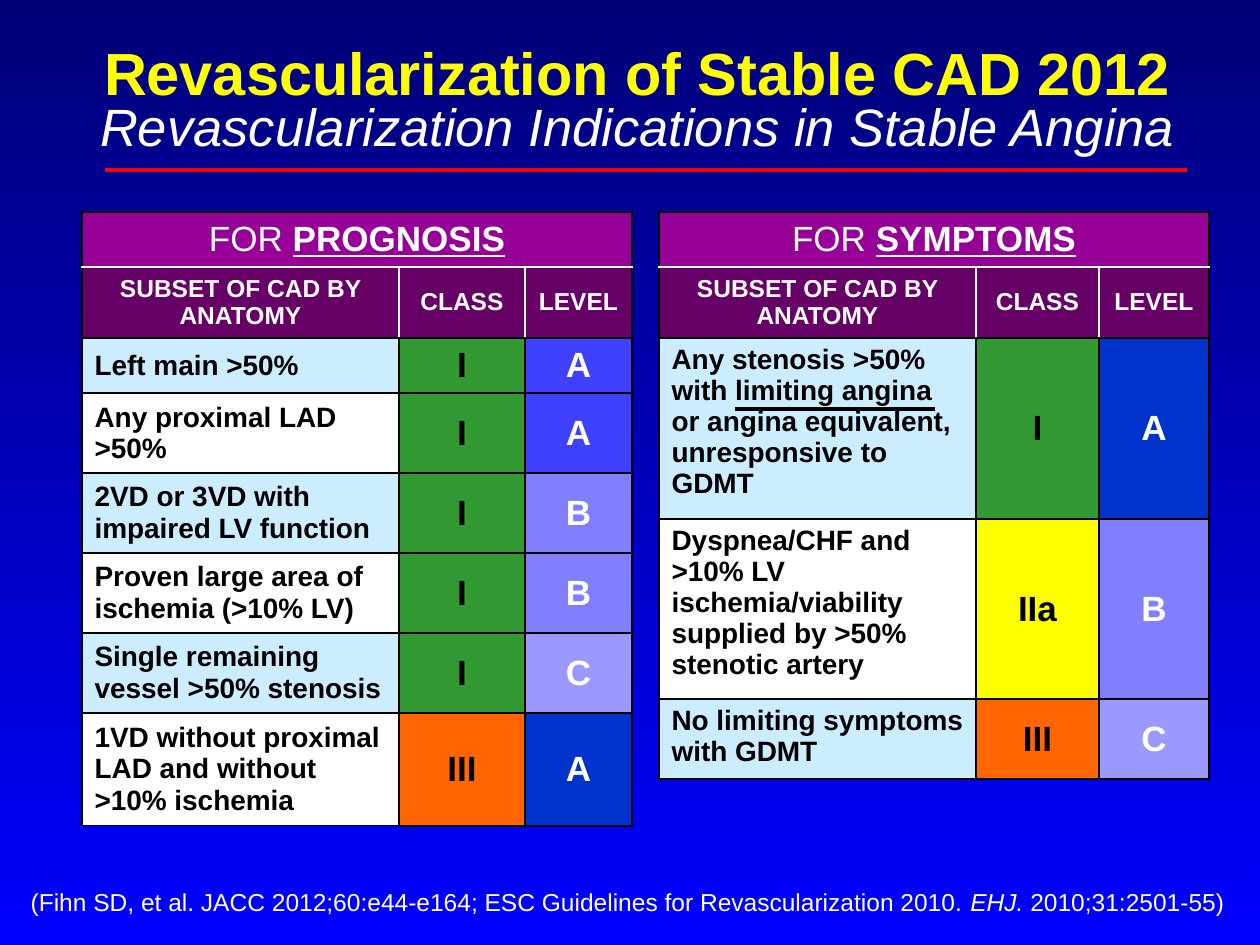
import pptx
import pptx.dml.color
import pptx.enum.shapes
import pptx.enum.text
import pptx.oxml
import pptx.oxml.ns
import pptx.util
from lxml import etree

PX = 914400 / 126
COLORS = {
    "night": "000076", "blue": "0000FF", "yellow": "FFFF00", "white": "FFFFFF",
    "black": "000000", "red": "FF0000", "purple": "960096", "plum": "660066",
    "ice": "CCECFF", "green": "339933", "orange": "FF6600",
    "violet": "4040FF", "royal": "0033CC", "lavender": "8080FF", "pale": "9999FF",
}
RGB = {name: pptx.dml.color.RGBColor.from_string(value) for name, value in COLORS.items()}
CENTER, LEFT = pptx.enum.text.PP_ALIGN.CENTER, pptx.enum.text.PP_ALIGN.LEFT
TOP, MIDDLE, BOTTOM = (pptx.enum.text.MSO_ANCHOR.TOP, pptx.enum.text.MSO_ANCHOR.MIDDLE,
                       pptx.enum.text.MSO_ANCHOR.BOTTOM)


def write(paragraph, align, size, color, *runs):
    """Add runs, each a text with a dict of font values that differ from plain."""
    paragraph.alignment = align
    for text, changes in runs:
        run = paragraph.add_run()
        run.text = text
        values = {"name": "Arial", "size": pptx.util.Pt(size), "bold": False, "italic": False}
        for key, value in (values | changes).items():
            setattr(run.font, key, value)
        run.font.color.rgb = RGB[color]


def paint(cell, fill, edges):
    """Fill a cell and draw its edges, each given as (colour, points)."""
    cell.fill.solid()
    cell.fill.fore_color.rgb = RGB[fill]
    properties = cell._tc.get_or_add_tcPr()
    for index, side in enumerate("LRTB"):
        color, points = edges[side]
        properties.insert(index, pptx.oxml.parse_xml(
            f'<a:ln{side} {pptx.oxml.ns.nsdecls("a")} w="{int(points * 12700)}">'
            f'<a:solidFill><a:srgbClr val="{COLORS[color]}"/></a:solidFill></a:ln{side}>'))


deck = pptx.Presentation()
deck.slide_width, deck.slide_height = int(1260 * PX), int(945 * PX)
slide = deck.slides.add_slide(deck.slide_layouts[5])

backdrop = slide.background.fill
backdrop.gradient()
backdrop.gradient_angle = 270
for stop, color, position in zip(backdrop.gradient_stops, ("night", "blue"), (0, 1)):
    stop.color.rgb = RGB[color]
    stop.position = position

# Title and citation
title = slide.shapes.title
title.left, title.top, title.width, title.height = (int(n * PX) for n in (68, 34, 1139, 129))
citation = slide.shapes.add_textbox(*(int(n * PX) for n in (24, 880, 1207, 43)))
for frame in (title.text_frame, citation.text_frame):
    frame.word_wrap = True
    frame.auto_size = pptx.enum.text.MSO_AUTO_SIZE.NONE
    frame.vertical_anchor = BOTTOM
citation.text_frame.margin_left = citation.text_frame.margin_right = 0

heading = title.text_frame.paragraphs[0]
heading.line_spacing = pptx.util.Pt(28)
write(heading, CENTER, 34, "yellow", ("Revascularization of Stable CAD 2012", {"bold": True}))
heading.add_line_break()
write(heading, CENTER, 30, "white",
      ("Revascularization Indications in Stable Angina", {"italic": True}))
write(citation.text_frame.paragraphs[0], CENTER, 14, "white",
      ("(Fihn SD, et al. JACC 2012;60:e44-e164; ESC Guidelines for Revascularization 2010. ", {}),
      ("EHJ.", {"italic": True}), (" 2010;31:2501-55)", {}))

# Indication tables: each row is subset, class, class fill, level, level fill, height
indications = [
    ("PROGNOSIS", 82, (317, 126, 107), MIDDLE, [
        ("Left main >50%", "I", "green", "A", "violet", 55),
        ("Any proximal LAD >50%", "I", "green", "A", "violet", 80),
        ("2VD or 3VD with impaired LV function", "I", "green", "B", "lavender", 80),
        ("Proven large area of ischemia (>10% LV)", "I", "green", "B", "lavender", 80),
        ("Single remaining vessel >50% stenosis", "I", "green", "C", "pale", 80),
        ("1VD without proximal LAD and without >10% ischemia", "III", "orange", "A", "royal", 113),
    ]),
    ("SYMPTOMS", 659, (317, 123, 110), TOP, [
        ("Any stenosis >50% with limiting angina or angina equivalent, unresponsive to GDMT",
         "I", "green", "A", "royal", 181),
        ("Dyspnea/CHF and >10% LV ischemia/viability supplied by >50% stenotic artery",
         "IIa", "yellow", "B", "lavender", 180),
        ("No limiting symptoms with GDMT", "III", "orange", "C", "pale", 80),
    ]),
]
thin, thick, light = ("black", 1), ("black", 1.5), ("white", 1)
bold = {"bold": True}

for goal, left, widths, subset_anchor, subsets in indications:
    heights = [55, 71] + [subset[-1] for subset in subsets]
    table = slide.shapes.add_table(
        len(heights), 3, *(int(n * PX) for n in (left, 212, sum(widths), sum(heights)))).table
    table.first_row = table.horz_banding = False
    for column, width in zip(table.columns, widths):
        column.width = int(width * PX)
    for row, height in zip(table.rows, heights):
        row.height = int(height * PX)

    for column in range(3):
        paint(table.cell(0, column), "purple", {"L": thin, "R": thick, "T": thin, "B": light})
    banner = table.cell(0, 0)
    banner.merge(table.cell(0, 2))
    banner.vertical_anchor = MIDDLE
    write(banner.text_frame.paragraphs[0], CENTER, 20, "white",
          ("FOR ", {}), (goal, {"bold": True, "underline": True}))

    for column, label in enumerate(("SUBSET OF CAD BY ANATOMY", "CLASS", "LEVEL")):
        cell = table.cell(1, column)
        cell.vertical_anchor = MIDDLE
        write(cell.text_frame.paragraphs[0], CENTER, 14, "white", (label, bold))
        paint(cell, "plum", {"L": light if column else thin, "R": thick if column == 2 else light,
                             "T": light, "B": thin})

    for row, (subset, grade, grade_fill, level, level_fill, _) in enumerate(subsets, start=2):
        top = thin if row == 2 else thick
        entries = [
            (subset, LEFT, 16, "black", "white" if row % 2 else "ice", subset_anchor,
             dict.fromkeys("LRTB", thin)),
            (grade, CENTER, 20, "black", grade_fill, MIDDLE,
             {"L": thin, "R": thick, "T": top, "B": thick}),
            (level, CENTER, 20, "white", level_fill, MIDDLE,
             {"L": thick, "R": thick, "T": top, "B": thick}),
        ]
        for column, (text, align, size, color, fill, anchor, edges) in enumerate(entries):
            cell = table.cell(row, column)
            cell.vertical_anchor = anchor
            write(cell.text_frame.paragraphs[0], align, size, color, (text, bold))
            paint(cell, fill, edges)

# Underline of "limiting angina" and rule below the title
for start, end, y, color, points in ((735, 935, 409, "black", 2), (105, 1187, 170, "red", 2.25)):
    rule = slide.shapes.add_connector(
        pptx.enum.shapes.MSO_CONNECTOR.STRAIGHT, *(int(n * PX) for n in (start, y, end, y)))
    rule.line.color.rgb = RGB[color]
    rule.line.width = pptx.util.Pt(points)
    etree.SubElement(rule._element.spPr, pptx.oxml.ns.qn("a:effectLst"))

deck.save("out.pptx")
